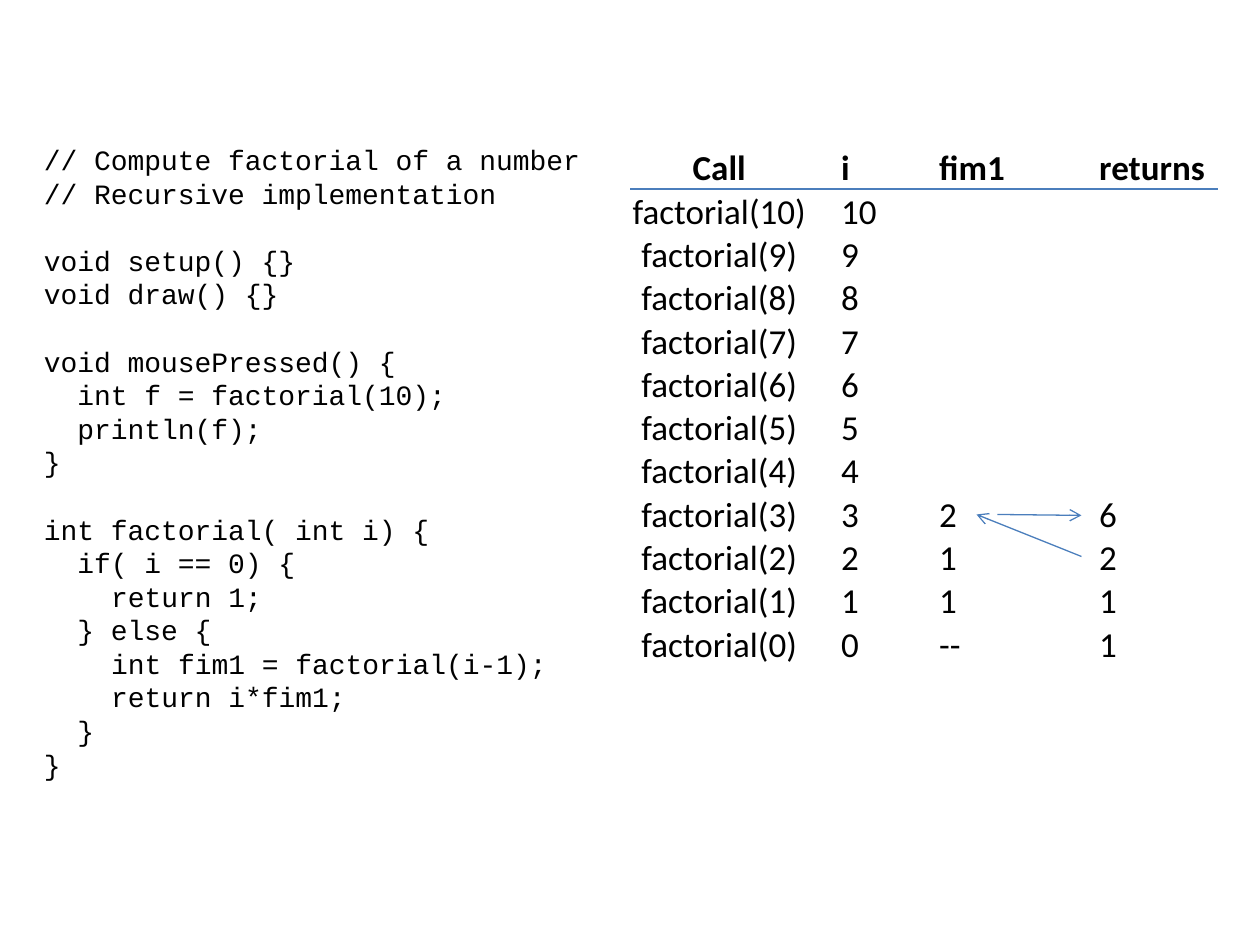
from math import factorial

from lxml.etree import SubElement
from pptx import Presentation
from pptx.dml.color import RGBColor
from pptx.enum.shapes import MSO_CONNECTOR
from pptx.enum.text import MSO_ANCHOR, MSO_AUTO_SIZE, PP_ALIGN
from pptx.oxml.ns import qn
from pptx.util import Pt

CODE = """// Compute factorial of a number
// Recursive implementation

void setup() {}
void draw() {}

void mousePressed() {
  int f = factorial(10);
  println(f);
}

int factorial( int i) {
  if( i == 0) {
    return 1;
  } else {
    int fim1 = factorial(i-1);
    return i*fim1;
  }
}"""


def tint(code):
    """Turn a hex string into a colour."""
    return RGBColor.from_string(code)


def apply(item, values):
    """Set each named value on the item."""
    for name, value in values.items():
        setattr(item, name, value)


class Page:
    """Hold the style and the slide being drawn."""

    ink, blue = "000000", "4B7EBC"
    mono = {"name": "Courier New", "size": Pt(16)}
    sans = {"name": "Calibri", "size": Pt(20)}
    cell = {"margin_left": Pt(0.7), "margin_right": Pt(0.7),
            "margin_top": Pt(0.3), "margin_bottom": 0,
            "vertical_anchor": MSO_ANCHOR.BOTTOM}
    step = 19.2

    def __init__(self, deck):
        """Add a blank slide to the deck."""
        self.slide = deck.slides.add_slide(deck.slide_layouts[6])

    def font(self, font, style):
        """Give a font its style and ink."""
        apply(font, style)
        font.color.rgb = tint(self.ink)

    def code(self, text, *box):
        """Set code with one step per indent level and per gap."""
        frame = self.slide.shapes.add_textbox(*map(Pt, box)).text_frame
        apply(frame, {"word_wrap": True,
                      "auto_size": MSO_AUTO_SIZE.SHAPE_TO_FIT_TEXT})
        para, gap = frame.paragraphs[0], 0
        for line in text.splitlines():
            if not line:
                gap = self.step
                continue
            if para.runs:
                para = frame.add_paragraph()
            run = para.add_run()
            run.text = line.lstrip()
            self.font(run.font, self.mono)
            apply(para, {"line_spacing": Pt(self.step),
                         "space_before": Pt(gap)})
            depth = (len(line) - len(run.text)) // 2
            para._p.get_or_add_pPr().set("marL", str(Pt(depth * self.step)))
            gap = 0

    def table(self, rows, left, top, wides, high):
        """Draw a plain table with a bold head row."""
        frame = self.slide.shapes.add_table(
            len(rows), len(wides), Pt(left), Pt(top),
            Pt(sum(wides)), Pt(high * len(rows)))
        grid = frame.table
        apply(grid, {"first_row": False, "horz_banding": False})
        for col, wide in zip(grid.columns, wides):
            col.width = Pt(wide)
        for r, row in enumerate(rows):
            grid.rows[r].height = Pt(high)
            for c, text in enumerate(row):
                cell = grid.cell(r, c)
                apply(cell, self.cell)
                cell.fill.background()
                para = cell.text_frame.paragraphs[0]
                para.alignment = PP_ALIGN.LEFT if c else PP_ALIGN.CENTER
                style = {**self.sans, "bold": r == 0}
                if text:
                    run = para.add_run()
                    run.text = text
                    self.font(run.font, style)
                else:
                    end = SubElement(para._p, qn("a:endParaRPr"))
                    end.set("sz", str(int(style["size"].pt * 100)))

    def line(self, *ends, arrow=False):
        """Draw a thin line, with an arrowhead at its end if asked."""
        link = self.slide.shapes.add_connector(
            MSO_CONNECTOR.STRAIGHT, *map(Pt, ends))
        link.line.width = Pt(0.75)
        link.line.color.rgb = tint(self.blue)
        if arrow:
            tail = SubElement(link.line._get_or_add_ln(), qn("a:tailEnd"))
            tail.set("type", "arrow")
        SubElement(link._element.spPr, qn("a:effectLst"))


def trace(num, known=3):
    """Give the table row for one call."""
    row = [f"factorial({num})", str(num)]
    if num > known:
        return row + ["", ""]
    past = str(factorial(num - 1)) if num else "--"
    return row + [past, str(factorial(num))]


def main():
    """Build and save the slide."""
    deck = Presentation()
    apply(deck, {"slide_width": Pt(720), "slide_height": Pt(540)})
    page = Page(deck)
    page.code(CODE, 18, 78, 390, 376)
    rows = [["Call", "i", "fim1", "returns"]]
    rows += [trace(num) for num in range(10, -1, -1)]
    page.table(rows, 342, 84, [138, 56, 91.5, 80.5], 24.75)
    page.line(618, 318, 558, 294, arrow=True)
    page.line(570, 294, 618, 294.5, arrow=True)
    page.line(360, 108, 696, 108)
    deck.save("out.pptx")


if __name__ == "__main__":
    main()
